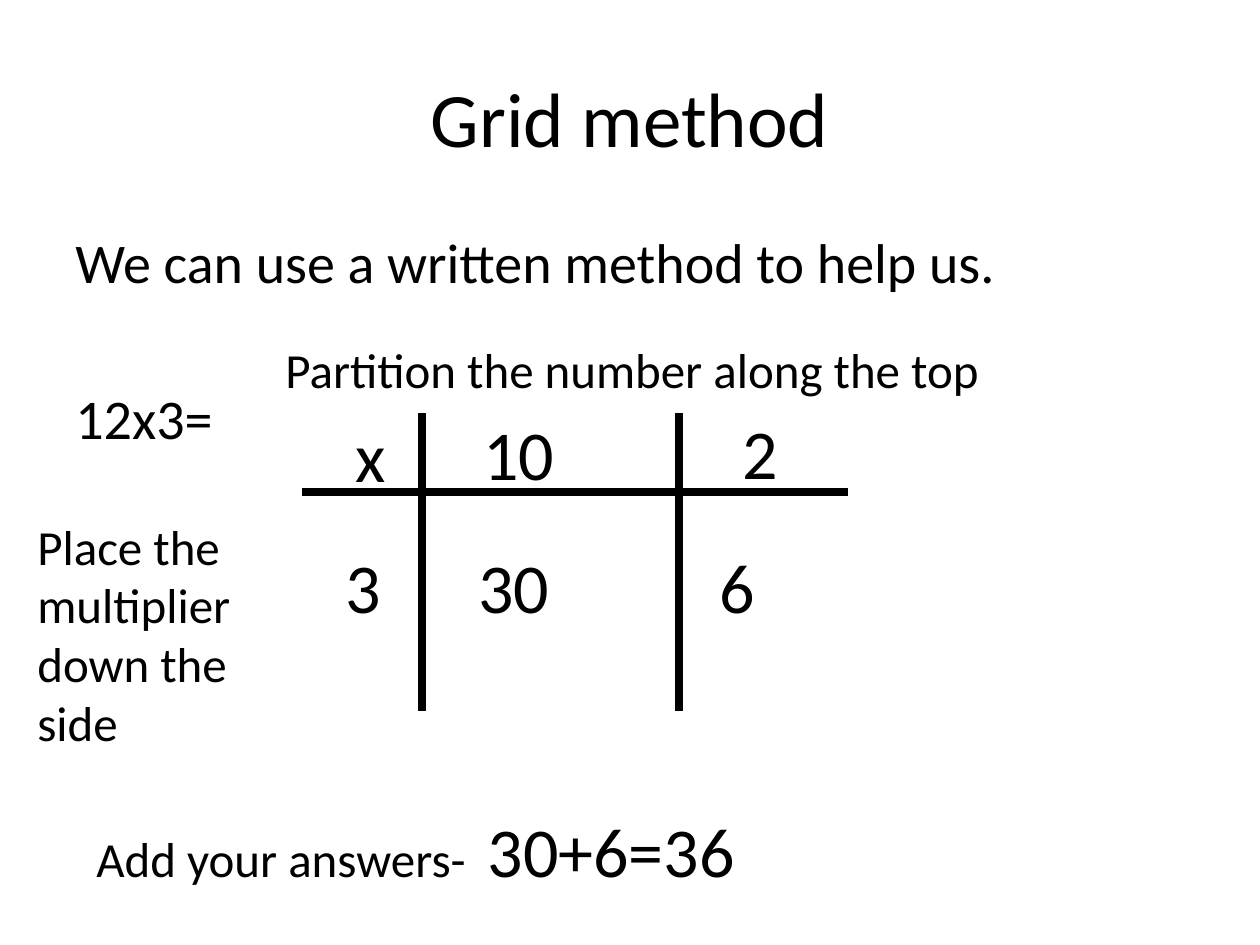
from lxml import etree
from pptx import Presentation
from pptx.dml.color import RGBColor
from pptx.enum.shapes import MSO_CONNECTOR
from pptx.enum.text import MSO_ANCHOR, PP_ALIGN
from pptx.oxml.ns import qn
from pptx.util import Pt

PX = 914400 / 126
BLACK = RGBColor(0, 0, 0)
FONT = "Calibri"
STRAIGHT = MSO_CONNECTOR.STRAIGHT
MIDDLE, TOP = MSO_ANCHOR.MIDDLE, MSO_ANCHOR.TOP
CENTER, LEFT = PP_ALIGN.CENTER, PP_ALIGN.LEFT

TITLE_SIZE, BODY_SIZE, NOTE_SIZE, DIGIT_SIZE = 44, 32, 28, 40


def px(*lengths):
    return [round(length * PX) for length in lengths]


def add_run(paragraph, text, size):
    run = paragraph.add_run()
    run.text = text
    font_format = {"name": FONT, "size": Pt(size)}
    for key, value in font_format.items():
        setattr(run.font, key, value)
    run.font.color.rgb = BLACK
    return run


def add_text(slide, box, text, size, align=LEFT, anchor=TOP):
    frame = slide.shapes.add_textbox(*px(*box)).text_frame
    frame_format = {"word_wrap": True, "vertical_anchor": anchor}
    for key, value in frame_format.items():
        setattr(frame, key, value)
    paragraph = frame.paragraphs[0]
    paragraph.alignment = align
    add_run(paragraph, text, size)
    return frame


def add_rule(slide, x1, y1, x2, y2):
    rule = slide.shapes.add_connector(STRAIGHT, *px(x1, y1, x2, y2))
    rule.line.color.rgb = BLACK
    rule.line.width = Pt(4.5)
    etree.SubElement(rule._element.spPr, qn("a:effectLst"))


def add_intro(slide, box):
    """Opening sentence with the sum to solve below it."""
    frame = add_text(slide, box, "We can use a written method to help us.", BODY_SIZE)
    sum_line = frame.add_paragraph()
    sum_line.space_before = Pt(51)
    add_run(sum_line, "12x3=", BODY_SIZE)


def add_grid(slide, box):
    """Multiplication grid: three rules and the numbers between them."""
    left, top, width, height = box
    add_rule(slide, left, top + 79, left + width, top + 79)
    for column in (377, 120):
        add_rule(slide, left + column, top, left + column, top + height)

    numbers = [
        ("x", 41, -7, 79), ("10", 169, -9, 164), ("2", 428, -10, 79),
        ("3", 31, 124, 79), ("30", 164, 124, 108), ("6", 405, 124, 108),
    ]
    for number, dx, dy, number_width in numbers:
        add_text(slide, (left + dx, top + dy, number_width, 97), number, DIGIT_SIZE)


def add_answer(slide, box):
    """Final step: a small prompt and the large total on one line."""
    frame = add_text(slide, box, "Add your answers-", NOTE_SIZE)
    line = frame.paragraphs[0]
    gap = add_run(line, " ", NOTE_SIZE)
    gap._r.get_or_add_rPr().set("spc", "630")
    add_run(line, "30+6=36", DIGIT_SIZE)


def main():
    deck = Presentation()
    deck.slide_width, deck.slide_height = px(1260, 945)
    slide = deck.slides.add_slide(deck.slide_layouts[6])

    # Heading and introduction
    add_text(slide, (63, 38, 1134, 158), "Grid method", TITLE_SIZE, CENTER, MIDDLE)
    add_intro(slide, (63, 221, 1134, 624))

    # Grid with its instructions
    add_grid(slide, (302, 413, 546, 298))
    add_text(slide, (273, 333, 725, 72), "Partition the number along the top", NOTE_SIZE)
    add_text(slide, (25, 510, 228, 251), "Place the multiplier down the side", NOTE_SIZE)

    # Total
    add_answer(slide, (84, 801, 725, 97))

    deck.save("out.pptx")


if __name__ == "__main__":
    main()
